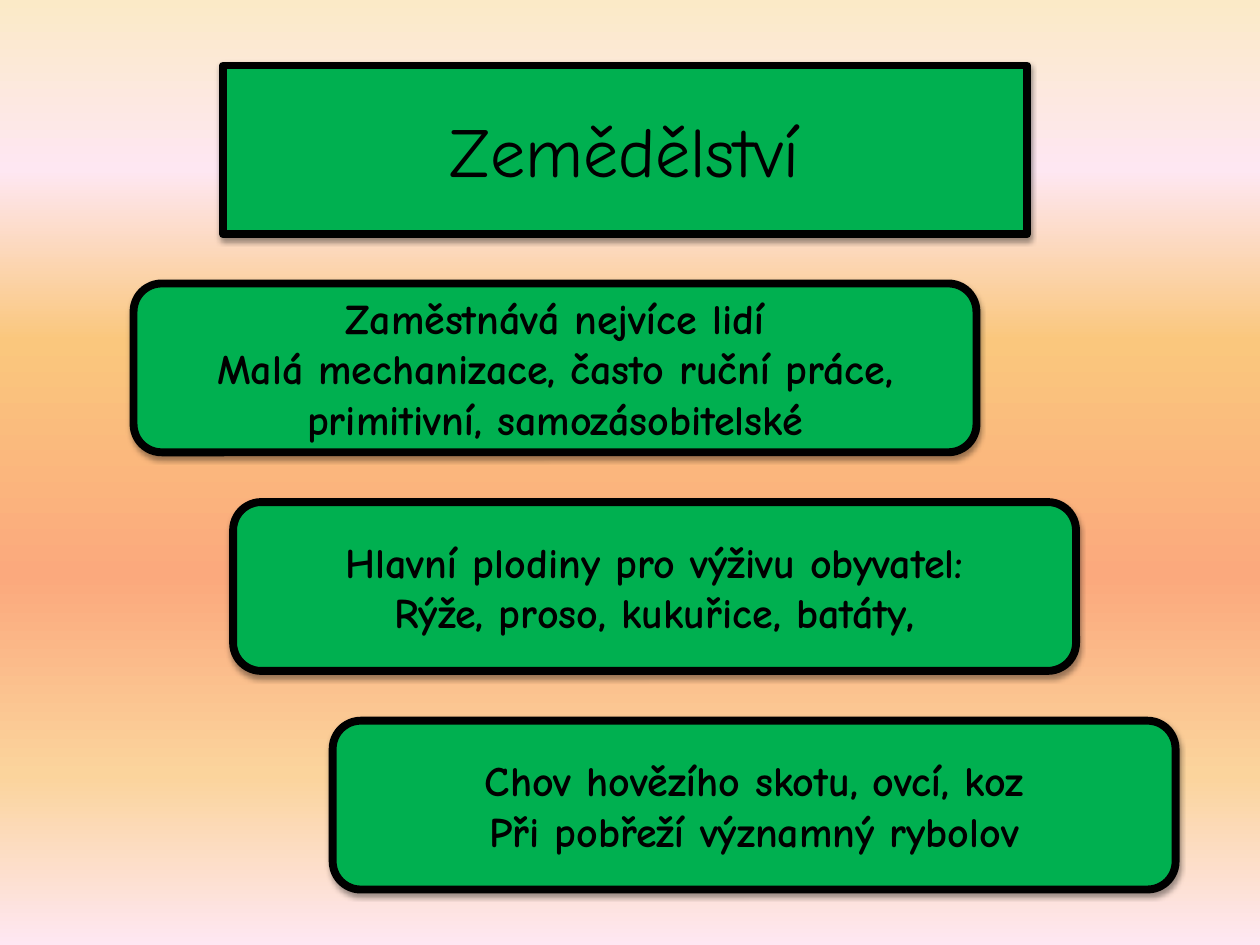
from lxml import etree
from pptx import Presentation
from pptx.dml.color import RGBColor
from pptx.enum.shapes import MSO_SHAPE
from pptx.enum.text import MSO_ANCHOR, MSO_AUTO_SIZE, PP_ALIGN
from pptx.oxml import parse_xml
from pptx.oxml.ns import nsdecls, qn
from pptx.util import Inches, Pt

ROUNDED = MSO_SHAPE.ROUNDED_RECTANGLE
MIDDLE = MSO_ANCHOR.MIDDLE
CENTER = PP_ALIGN.CENTER
NO_AUTOFIT = MSO_AUTO_SIZE.NONE
TITLE_ONLY = 5

FONT = "Comic Neue"
GREEN, BLACK = "00B050", "000000"
BACKGROUND = [(0, "FBEAC7"), (18, "FEE7F2"), (36, "FAC77D"),
              (61, "FBA97D"), (82, "FBD49C"), (100, "FEE7F2")]

# Three cards, each stepping down and to the right
CARD_LEFT, CARD_TOP = 1.06, 2.25
CARD_WIDTH, BOX_HEIGHT = 6.69, 1.34
STEP_RIGHT, STEP_DOWN = 0.79, 1.735
CARDS = [
    ["Zaměstnává nejvíce lidí",
     "Malá mechanizace, často ruční práce, primitivní, samozásobitelské"],
    ["Hlavní plodiny pro výživu obyvatel:", "Rýže, proso, kukuřice, batáty,"],
    ["Chov hovězího skotu, ovcí, koz", "Při pobřeží významný rybolov"],
]


def color(value):
    return RGBColor.from_string(value)


def paint_background(page, stops):
    """Vertical gradient with any number of stops."""
    fill = page.background.fill
    fill.gradient()
    fill.gradient_angle = 270
    stop_list = next(page._element.iter(qn("a:gsLst")))
    for stop in list(stop_list):
        stop_list.remove(stop)
    for percent, value in stops:
        stop = etree.SubElement(stop_list, qn("a:gs"), pos=str(percent * 1000))
        etree.SubElement(stop, qn("a:srgbClr"), val=value)


def add_shadow(shape):
    """Soft black shadow falling straight down."""
    shape.shadow.inherit = False
    effects = shape._element.spPr.find(qn("a:effectLst"))
    effects.append(parse_xml(
        f'<a:outerShdw {nsdecls("a")} blurRad="{Pt(3.15)}" dist="{Pt(1.57)}" '
        'dir="5400000" rotWithShape="0"><a:srgbClr val="000000">'
        '<a:alpha val="38000"/></a:srgbClr></a:outerShdw>'))


def style_box(shape):
    shape.fill.solid()
    shape.fill.fore_color.rgb = color(GREEN)
    shape.line.color.rgb = color(BLACK)
    shape.line.width = Pt(4.5)
    add_shadow(shape)


def write_text(shape, lines, size, bold=False):
    frame = shape.text_frame
    frame.word_wrap = True
    frame.auto_size = NO_AUTOFIT
    frame.vertical_anchor = MIDDLE
    for index, line in enumerate(lines):
        para = frame.add_paragraph() if index else frame.paragraphs[0]
        para.alignment = CENTER
        span = para.add_run()
        span.text = line
        span.font.name = FONT
        span.font.size = Pt(size)
        span.font.bold = bold
        span.font.color.rgb = color(BLACK)


def format_title(page, text):
    """Turn the title placeholder into a rounded box."""
    title = page.shapes.title
    title.left, title.top = Inches(1.77), Inches(0.52)
    title.width, title.height = Inches(6.38), Inches(BOX_HEIGHT)
    title._element.spPr.insert(1, parse_xml(
        f'<a:prstGeom {nsdecls("a")} prst="roundRect"><a:avLst/></a:prstGeom>'))
    style_box(title)
    write_text(title, [text], size=40)


def add_card(page, left, top, lines):
    box = page.shapes.add_shape(ROUNDED, Inches(left), Inches(top),
                                Inches(CARD_WIDTH), Inches(BOX_HEIGHT))
    style_box(box)
    write_text(box, lines, size=24, bold=True)


def main():
    deck = Presentation()
    deck.slide_width, deck.slide_height = Inches(10), Inches(7.5)
    page = deck.slides.add_slide(deck.slide_layouts[TITLE_ONLY])
    paint_background(page, BACKGROUND)
    format_title(page, "Zemědělství")
    for index, lines in enumerate(CARDS):
        add_card(page, CARD_LEFT + index * STEP_RIGHT,
                 CARD_TOP + index * STEP_DOWN, lines)
    deck.save("out.pptx")


if __name__ == "__main__":
    main()
